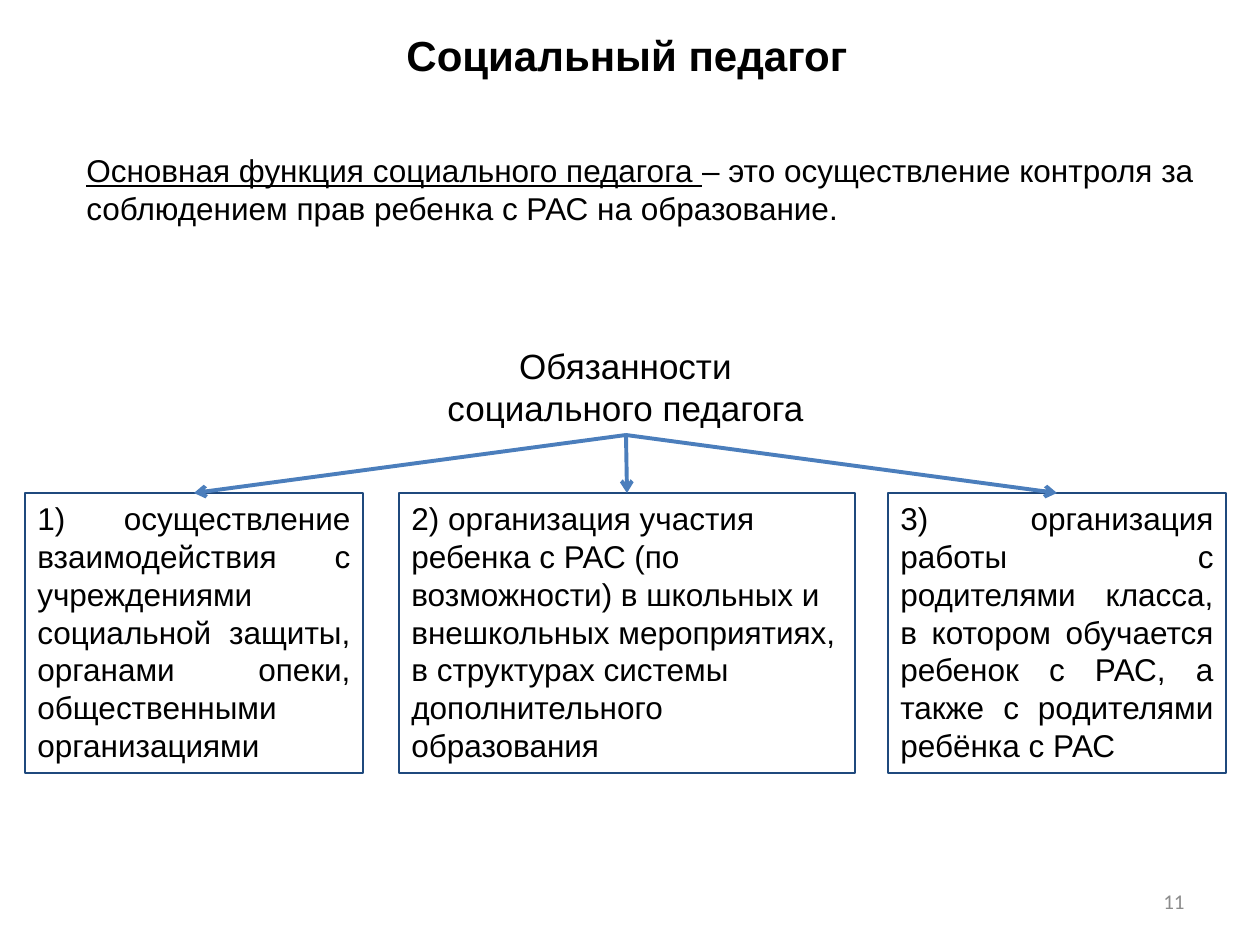
from dataclasses import dataclass

from lxml import etree
from pptx import Presentation
from pptx.dml.color import RGBColor
from pptx.enum.shapes import MSO_CONNECTOR, MSO_SHAPE
from pptx.enum.text import MSO_ANCHOR, PP_ALIGN
from pptx.oxml.ns import qn
from pptx.util import Pt

PX = 914400 / 126
BLACK = RGBColor(0x00, 0x00, 0x00)
GRAY = RGBColor(0x8C, 0x8C, 0x8C)
NAVY = RGBColor(0x1F, 0x49, 0x7D)
BLUE = RGBColor(0x4B, 0x7E, 0xBC)
LEFT, CENTER, RIGHT, JUSTIFY = (
    PP_ALIGN.LEFT, PP_ALIGN.CENTER, PP_ALIGN.RIGHT, PP_ALIGN.JUSTIFY)
TOP, MIDDLE = MSO_ANCHOR.TOP, MSO_ANCHOR.MIDDLE
RECTANGLE = MSO_SHAPE.RECTANGLE
STRAIGHT = MSO_CONNECTOR.STRAIGHT

DUTY_TOP, DUTY_HEIGHT = 493, 280
ARROW_START = (626, 435)


@dataclass
class Duty:
    left: int
    width: int
    text: str
    align: PP_ALIGN = JUSTIFY


DUTIES = [
    Duty(25, 338, "1) осуществление взаимодействия с учреждениями социальной "
         "защиты, органами опеки, общественными организациями"),
    Duty(399, 456, "2) организация участия ребенка с РАС (по возможности) в "
         "школьных и внешкольных мероприятиях, в структурах системы "
         "дополнительного образования", LEFT),
    Duty(888, 338, "3) организация работы с родителями класса, в котором "
         "обучается ребенок с РАС, а также с родителями ребёнка с РАС"),
]


def px(*lengths: int) -> list[int]:
    return [round(length * PX) for length in lengths]


def write(box, *texts: str, size: int = 18, font: str = "Arial",
          color: RGBColor = BLACK, align: PP_ALIGN = LEFT,
          anchor: MSO_ANCHOR = TOP, bold: bool = False,
          underline_first: bool = False) -> None:
    frame = box.text_frame
    frame.word_wrap = True
    frame.vertical_anchor = anchor
    para = frame.paragraphs[0]
    para.alignment = align
    for index, text in enumerate(texts):
        span = para.add_run()
        span.text = text
        span.font.name = font
        span.font.size = Pt(size)
        span.font.bold = bold
        span.font.underline = underline_first and index == 0
        span.font.color.rgb = color


def add_text(page, left: int, top: int, width: int, height: int,
             *texts: str, **style) -> None:
    write(page.shapes.add_textbox(*px(left, top, width, height)),
          *texts, **style)


def add_duty(page, duty: Duty) -> None:
    box = page.shapes.add_shape(
        RECTANGLE, *px(duty.left, DUTY_TOP, duty.width, DUTY_HEIGHT))
    box.shadow.inherit = False
    box.fill.background()
    box.line.color.rgb = NAVY
    box.line.width = Pt(0.75)
    write(box, duty.text, align=duty.align)


def add_arrow(page, duty: Duty) -> None:
    end = (duty.left + duty.width // 2, DUTY_TOP)
    arrow = page.shapes.add_connector(STRAIGHT, *px(*ARROW_START, *end))
    arrow.line.color.rgb = BLUE
    arrow.line.width = Pt(2.25)
    etree.SubElement(arrow.line._get_or_add_ln(), qn("a:tailEnd"), type="arrow")
    etree.SubElement(arrow._element.spPr, qn("a:effectLst"))


def main() -> None:
    deck = Presentation()
    deck.slide_width, deck.slide_height = px(1260, 945)
    page = deck.slides.add_slide(deck.slide_layouts[6])

    add_text(page, 280, 23, 694, 63, "Социальный педагог",
             size=24, bold=True, align=CENTER)
    add_text(page, 74, 145, 1132, 89, "Основная функция социального педагога ",
             "– это осуществление контроля за соблюдением прав ребенка с РАС "
             "на образование.", align=JUSTIFY, underline_first=True)
    add_text(page, 432, 338, 387, 97, "Обязанности социального педагога",
             size=20, align=CENTER)
    for duty in DUTIES:
        add_duty(page, duty)
    for duty in DUTIES:
        add_arrow(page, duty)
    add_text(page, 903, 876, 294, 50, "11", size=12, font="Calibri",
             color=GRAY, align=RIGHT, anchor=MIDDLE)

    deck.save("out.pptx")


if __name__ == "__main__":
    main()
